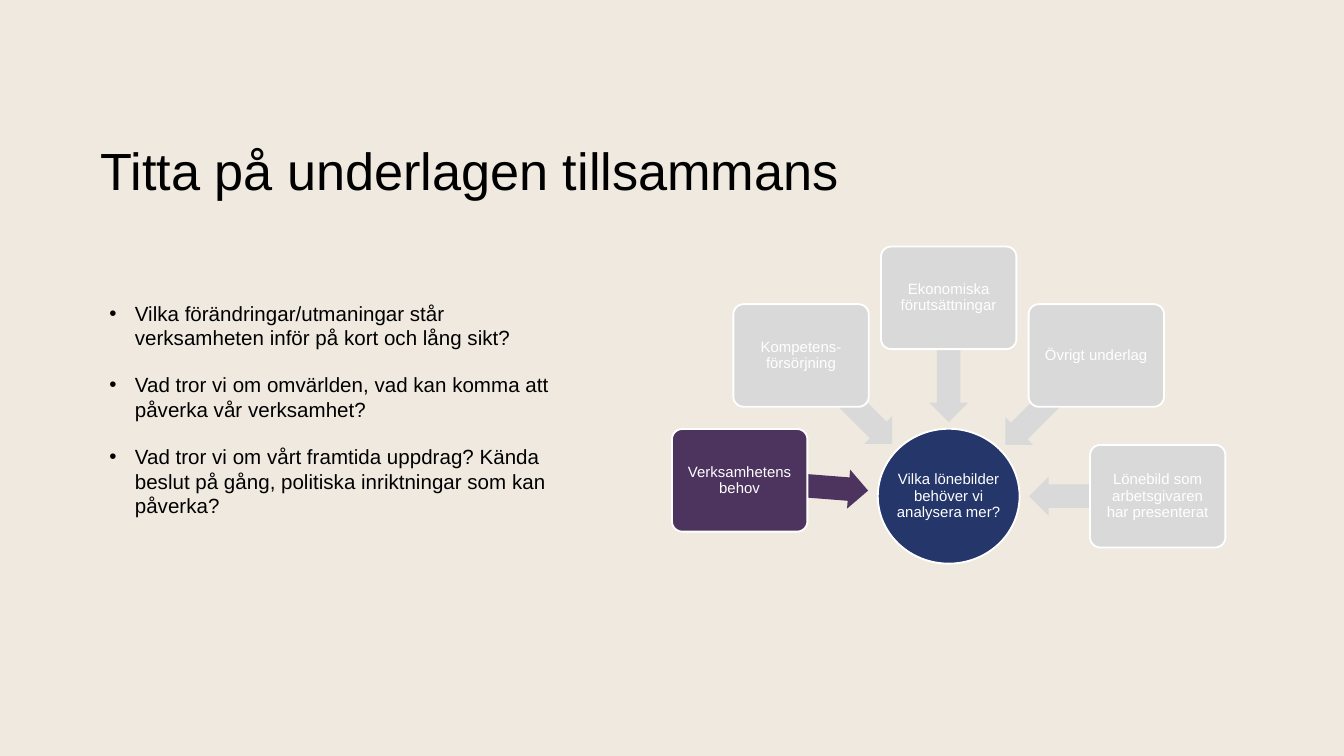
"""Build a slide with discussion questions beside a converging diagram."""
from lxml.etree import SubElement
from pptx import Presentation
from pptx.dml.color import RGBColor
from pptx.enum.shapes import MSO_SHAPE as Shape
from pptx.enum.text import MSO_ANCHOR as Anchor, PP_ALIGN as Align
from pptx.oxml.ns import qn
from pptx.util import Cm, Pt

WHITE, BLACK, GREY, PURPLE, NAVY = "FFFFFF", "000000", "D9D9D9", "4D345F", "24366A"


def add_run(paragraph, text, size, color):
    run = paragraph.add_run()
    run.text = text
    run.font.name = "Arial"
    run.font.size = Pt(size)
    run.font.color.rgb = RGBColor.from_string(color)


def add_node(shapes, kind, center_x, center_y, width, height, color, text="", inset=0.0):
    shape = shapes.add_shape(kind, Cm(center_x - width / 2), Cm(center_y - height / 2), Cm(width), Cm(height))
    shape.shadow.inherit = False
    shape.fill.solid()
    shape.fill.fore_color.rgb = RGBColor.from_string(color)
    if not text:
        shape.line.fill.background()
        return shape
    shape.line.color.rgb = RGBColor.from_string(WHITE)
    shape.line.width = Pt(1)
    frame = shape.text_frame
    frame.word_wrap = True
    frame.vertical_anchor = Anchor.MIDDLE
    frame.margin_left = frame.margin_right = Cm(inset)
    frame.margin_top = frame.margin_bottom = Cm(inset)
    paragraph = frame.paragraphs[0]
    paragraph.alignment = Align.CENTER
    paragraph.line_spacing = 0.9
    add_run(paragraph, text, 8, WHITE)
    return shape


presentation = Presentation()
presentation.slide_width, presentation.slide_height = Cm(25.4), Cm(14.29)
slide = presentation.slides.add_slide(presentation.slide_layouts[5])
slide.background.fill.solid()
slide.background.fill.fore_color.rgb = RGBColor.from_string("EFE9DF")

title = slide.shapes.title
title.left, title.top, title.width, title.height = Cm(1.9), Cm(1.9), Cm(20.78), Cm(2.77)
frame = title.text_frame
frame.margin_left = frame.margin_right = frame.margin_top = frame.margin_bottom = 0
frame.vertical_anchor = Anchor.MIDDLE
paragraph = frame.paragraphs[0]
paragraph.alignment = Align.LEFT
paragraph.line_spacing = 0.9
add_run(paragraph, "Titta på underlagen tillsammans", 28, BLACK)

diagram = slide.shapes.add_group_shape()
middle = 17.93
add_node(diagram.shapes, Shape.OVAL, middle, 9.38, 2.68, 2.55, NAVY,
         "Vilka lönebilder behöver vi analysera mer?", -0.1)

sources = [
    ("Verksamhetens behov", PURPLE, -3.95, 9.08, -2.72, 9.18, 184.5),
    ("Kompetens-försörjning", GREY, -2.79, 6.72, -1.92, 7.54, 225),
    ("Ekonomiska förutsättningar", GREY, 0, 5.63, 0, 6.78, 270),
    ("Övrigt underlag", GREY, 2.79, 6.72, 1.92, 7.56, 315),
    ("Lönebild som arbetsgivaren har presenterat", GREY, 3.95, 9.38, 2.72, 9.38, 0),
]
for text, color, card_offset, card_y, arrow_offset, arrow_y, angle in sources:
    arrow = add_node(diagram.shapes, Shape.LEFT_ARROW, middle + arrow_offset, arrow_y, 2.4, 0.74, color)
    arrow.adjustments[0], arrow.adjustments[1] = 0.6, 0.5
    arrow.rotation = angle
    card = add_node(diagram.shapes, Shape.ROUNDED_RECTANGLE, middle + card_offset, card_y,
                    2.56, 1.94, color, text, 0.14)
    card.adjustments[0] = 0.1

questions = [
    "Vilka förändringar/utmaningar står verksamheten inför på kort och lång sikt?",
    "Vad tror vi om omvärlden, vad kan komma att påverka vår verksamhet?",
    "Vad tror vi om vårt framtida uppdrag? Kända beslut på gång, politiska inriktningar som kan påverka?",
]
frame = slide.shapes.add_textbox(Cm(1.82), Cm(5.56), Cm(9.14), Cm(4.4)).text_frame
frame.word_wrap = True
for index, question in enumerate(questions):
    paragraph = frame.add_paragraph() if index else frame.paragraphs[0]
    properties = paragraph._p.get_or_add_pPr()
    properties.set("marL", str(Cm(0.48)))
    properties.set("indent", str(Cm(-0.48)))
    SubElement(properties, qn("a:buFont"), typeface="Arial")
    SubElement(properties, qn("a:buChar"), char="•")
    if index:
        paragraph.space_before = Pt(12)
    add_run(paragraph, question, 11, BLACK)

presentation.save("out.pptx")
